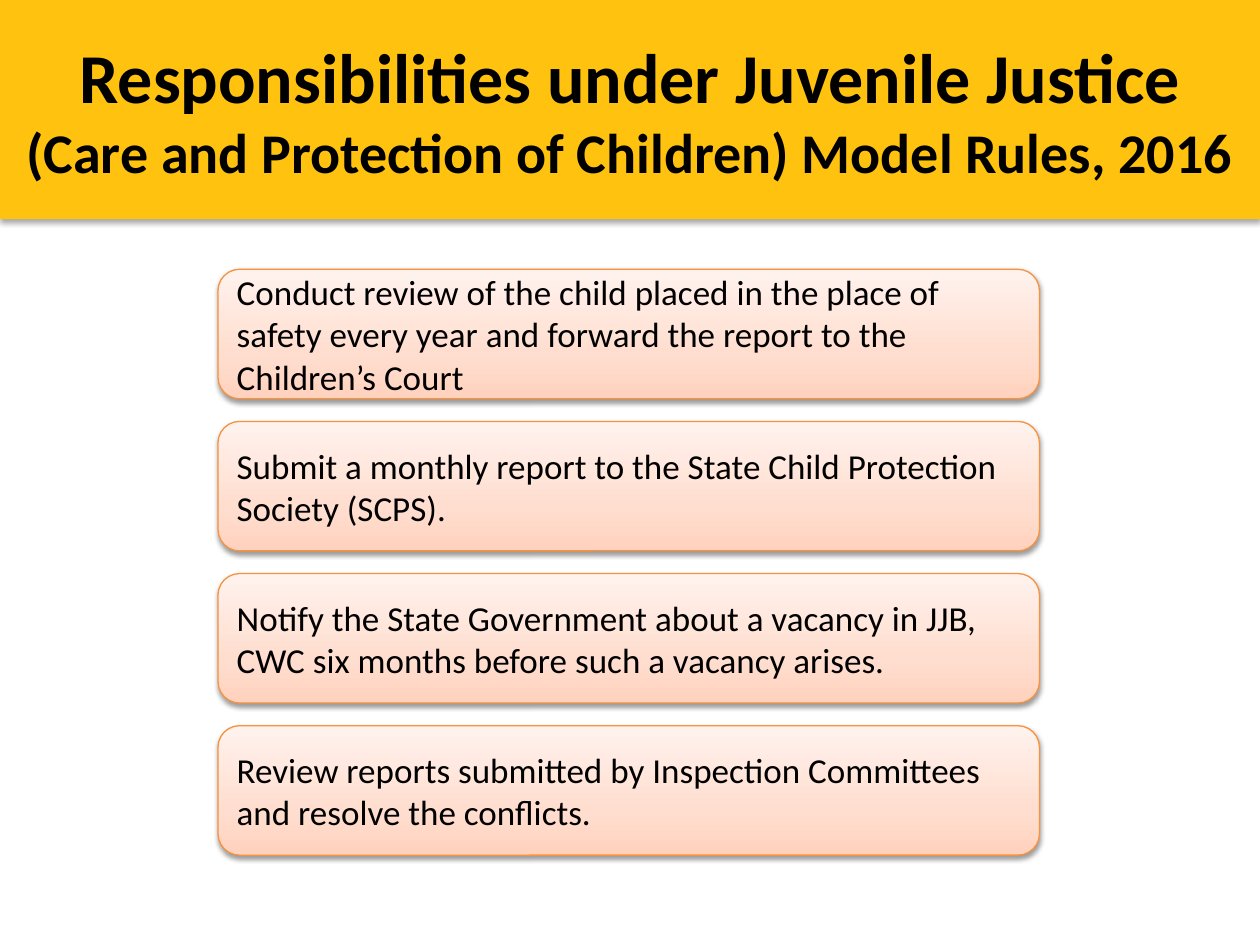
from copy import deepcopy
from dataclasses import dataclass

from pptx import Presentation
from pptx.dml.color import RGBColor
from pptx.enum.shapes import MSO_SHAPE
from pptx.enum.text import MSO_ANCHOR, MSO_AUTO_SIZE, PP_ALIGN
from pptx.oxml import parse_xml
from pptx.oxml.ns import nsdecls, qn
from pptx.util import Inches, Pt


@dataclass(frozen=True)
class Theme:
    font: str = "Calibri"
    text: str = "000000"
    band: str = "FFC20E"
    border: str = "F69240"
    gradient: tuple = ((0, "FFD2BD"), (0.35, "FFDED0"), (1, "FFF2ED"))
    title_sizes: tuple = (40, 32)
    card_size: int = 20


class SlideBuilder:
    """Draws themed elements placed by shares of the slide's size."""

    def __init__(self, prs, theme):
        self.prs, self.theme = prs, theme
        self.slide = prs.slides.add_slide(prs.slide_layouts[5])

    def box(self, left, top, width, height):
        w, h = self.prs.slide_width, self.prs.slide_height
        return round(left * w), round(top * h), round(width * w), round(height * h)

    def style(self, p, size, align, bold=False):
        p.alignment = align
        p.font.name = self.theme.font
        p.font.size = Pt(size)
        p.font.bold = bold
        p.font.color.rgb = RGBColor.from_string(self.theme.text)

    def shadow(self, sp, distance, opacity):
        sp.shadow.inherit = False
        effects = sp._element.spPr.find(qn("a:effectLst"))
        effects.append(parse_xml(
            f'<a:outerShdw {nsdecls("a")} blurRad="{Pt(3.1)}" dist="{Pt(distance)}" '
            f'dir="5400000" rotWithShape="0"><a:srgbClr val="000000">'
            f'<a:alpha val="{opacity * 1000}"/></a:srgbClr></a:outerShdw>'))

    def band(self, *area):
        sp = self.slide.shapes.add_shape(MSO_SHAPE.RECTANGLE, *self.box(*area))
        sp.fill.solid()
        sp.fill.fore_color.rgb = RGBColor.from_string(self.theme.band)
        sp.line.fill.background()
        self.shadow(sp, 1.8, 35)
        self.slide.shapes.title._element.addprevious(sp._element)

    def title(self, lines, *area):
        sp = self.slide.shapes.title
        sp.left, sp.top, sp.width, sp.height = self.box(*area)
        tf = sp.text_frame
        tf.text = "\n".join(lines)
        tf.word_wrap = True
        tf.auto_size = MSO_AUTO_SIZE.NONE
        tf.vertical_anchor = MSO_ANCHOR.TOP
        for p, size in zip(tf.paragraphs, self.theme.title_sizes):
            self.style(p, size, PP_ALIGN.CENTER, bold=True)

    def gradient(self, fill):
        fill.gradient()
        fill.gradient_angle = 90
        first = fill.gradient_stops[0]._gs
        first.addnext(deepcopy(first))
        for stop, (position, color) in zip(fill.gradient_stops, self.theme.gradient):
            stop.position = position
            stop.color.rgb = RGBColor.from_string(color)

    def card(self, text, *area):
        sp = self.slide.shapes.add_shape(MSO_SHAPE.ROUNDED_RECTANGLE, *self.box(*area))
        self.gradient(sp.fill)
        sp.line.color.rgb = RGBColor.from_string(self.theme.border)
        sp.line.width = Pt(0.75)
        self.shadow(sp, 1.6, 38)
        tf = sp.text_frame
        tf.text = text
        tf.word_wrap = True
        tf.vertical_anchor = MSO_ANCHOR.MIDDLE
        self.style(tf.paragraphs[0], self.theme.card_size, PP_ALIGN.LEFT)


TITLE = (
    "Responsibilities under Juvenile Justice",
    "(Care and Protection of Children) Model Rules, 2016",
)
DUTIES = (
    "Conduct review of the child placed in the place of safety every year "
    "and forward the report to the Children’s Court",
    "Submit a monthly report to the State Child Protection Society (SCPS).",
    "Notify the State Government about a vacancy in JJB, CWC six months "
    "before such a vacancy arises.",
    "Review reports submitted by Inspection Committees and resolve the conflicts.",
)


def main():
    prs = Presentation()
    prs.slide_width, prs.slide_height = Inches(10), Inches(7.5)
    s = SlideBuilder(prs, Theme())
    s.band(0, 0, 1, 0.232)
    s.title(TITLE, 0, 0.029, 1, 0.167)
    for row, duty in enumerate(DUTIES):
        s.card(duty, 0.173, 0.285 + 0.161 * row, 0.652, 0.137)
    prs.save("out.pptx")


if __name__ == "__main__":
    main()
